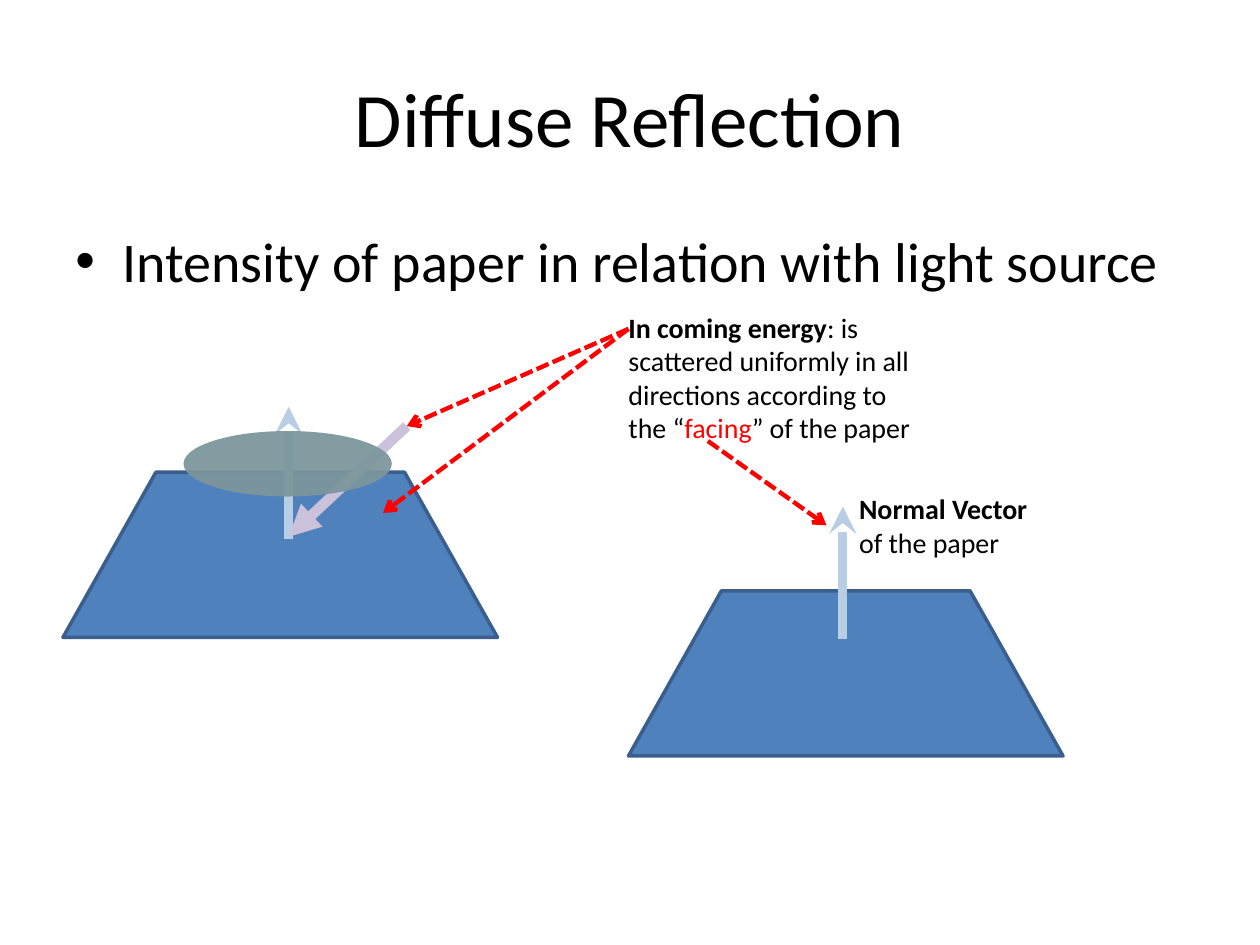
import pptx
import pptx.dml.color
import pptx.enum.dml
import pptx.enum.shapes
import pptx.enum.text
import pptx.oxml
import pptx.oxml.ns
import pptx.util

Cm = pptx.util.Cm
Pt = pptx.util.Pt
RGBColor = pptx.dml.color.RGBColor
MSO_SHAPE = pptx.enum.shapes.MSO_SHAPE
ANCHOR = pptx.enum.text.MSO_ANCHOR

BLACK = RGBColor(0x00, 0x00, 0x00)
RED = RGBColor(0xFF, 0x00, 0x00)
PAPER_BLUE = RGBColor(0x4F, 0x81, 0xBD)
PAPER_EDGE = RGBColor(0x3A, 0x5F, 0x8C)
NORMAL_BLUE = RGBColor(0xB9, 0xCD, 0xE5)
LIGHT_PURPLE = RGBColor(0xCC, 0xC1, 0xDA)
SCATTER_GREY = RGBColor(0x7C, 0x96, 0x9C)

DASH = pptx.enum.dml.MSO_LINE.SQUARE_DOT

deck = pptx.Presentation()
deck.slide_width, deck.slide_height = Cm(25.4), Cm(19.05)
slide = deck.slides.add_slide(deck.slide_layouts[6])


def add_text(left, top, width, height, size, anchor, runs):
    """Add one paragraph made of (text, bold, colour) runs; \\v breaks the line."""
    box = slide.shapes.add_textbox(Cm(left), Cm(top), Cm(width), Cm(height))
    box.text_frame.word_wrap = True
    box.text_frame.vertical_anchor = anchor
    paragraph = box.text_frame.paragraphs[0]
    for text, bold, colour in runs:
        if text == "\v":
            paragraph.add_line_break()
            continue
        run = paragraph.add_run()
        run.text = text
        run.font.name = "Calibri"
        run.font.size = Pt(size)
        run.font.bold = bold
        run.font.color.rgb = colour
    return paragraph


def add_arrow(start, end, colour, width, head, dash=None):
    arrow = slide.shapes.add_connector(
        pptx.enum.shapes.MSO_CONNECTOR.STRAIGHT, *map(Cm, start + end))
    arrow.line.color.rgb = colour
    arrow.line.width = Pt(width)
    if dash is not None:
        arrow.line.dash_style = dash
    tail = pptx.oxml.parse_xml(
        f'<a:tailEnd {pptx.oxml.ns.nsdecls("a")} type="{head}"/>')
    arrow.line._get_or_add_ln().append(tail)
    arrow._element.spPr.append(
        pptx.oxml.parse_xml(f'<a:effectLst {pptx.oxml.ns.nsdecls("a")}/>'))


# Title and bullet
title = add_text(1.27, 0.76, 22.86, 3.18, 44, ANCHOR.MIDDLE,
                 [("Diffuse Reflection", False, BLACK)])
title.alignment = pptx.enum.text.PP_ALIGN.CENTER

bullet = add_text(1.27, 4.45, 22.86, 12.57, 32, ANCHOR.TOP,
                  [("Intensity of paper in relation with light source", False, BLACK)])
bullet_props = bullet._p.get_or_add_pPr()
bullet_props.set("marL", str(Cm(0.95)))
bullet_props.set("indent", str(-Cm(0.95)))
for bullet_xml in ('<a:buFont {} typeface="Arial"/>', '<a:buChar {} char="•"/>'):
    bullet_props.append(
        pptx.oxml.parse_xml(bullet_xml.format(pptx.oxml.ns.nsdecls("a"))))

# Explanation of the incoming energy
add_text(12.42, 5.61, 6.35, 3.99, 16, ANCHOR.MIDDLE, [
    ("In coming energy", True, BLACK),
    (": is scattered uniformly in all directions according to the “", False, BLACK),
    ("facing", False, RED),
    ("” of the paper", False, BLACK),
])

# Sheets of paper, each with its normal vector
for paper_left, paper_top, normal_x, normal_base in (
        (12.67, 11.91, 16.99, 12.88), (1.27, 9.52, 5.82, 10.87)):
    paper = slide.shapes.add_shape(
        MSO_SHAPE.TRAPEZOID, Cm(paper_left), Cm(paper_top), Cm(8.76), Cm(3.33))
    paper.adjustments[0] = 0.563
    paper.shadow.inherit = False
    paper.fill.solid()
    paper.fill.fore_color.rgb = PAPER_BLUE
    paper.line.color.rgb = PAPER_EDGE
    paper.line.width = Pt(2)
    add_arrow((normal_x, normal_base), (normal_x, normal_base - 2.67),
              NORMAL_BLUE, 5.25, "stealth")

# Pointer to the normal vector and its label
add_arrow((14.27, 8.89), (16.66, 10.59), RED, 2.5, "arrow", DASH)
add_text(17.07, 9.17, 6.35, 2.84, 16, ANCHOR.MIDDLE, [
    ("Normal Vector", True, BLACK), ("\v", True, BLACK),
    ("of the paper", False, BLACK),
])

# Incoming light ray and the pointers to ray and paper
ray_start = (8.2, 8.59)
add_arrow(ray_start, (5.82, 10.82), LIGHT_PURPLE, 6, "triangle")
for target in ((7.72, 10.34), ray_start):
    add_arrow((12.67, 6.63), target, RED, 2.5, "arrow", DASH)

# Disc of scattered light, slightly transparent
disc = slide.shapes.add_shape(
    MSO_SHAPE.OVAL, Cm(3.7), Cm(8.69), Cm(4.2), Cm(1.32))
disc.shadow.inherit = False
disc.fill.solid()
disc.fill.fore_color.rgb = SCATTER_GREY
disc.line.fill.background()
disc_colour = disc._element.spPr.find(".//" + pptx.oxml.ns.qn("a:srgbClr"))
disc_colour.append(pptx.oxml.parse_xml(
    f'<a:alpha {pptx.oxml.ns.nsdecls("a")} val="94000"/>'))

deck.save("out.pptx")
